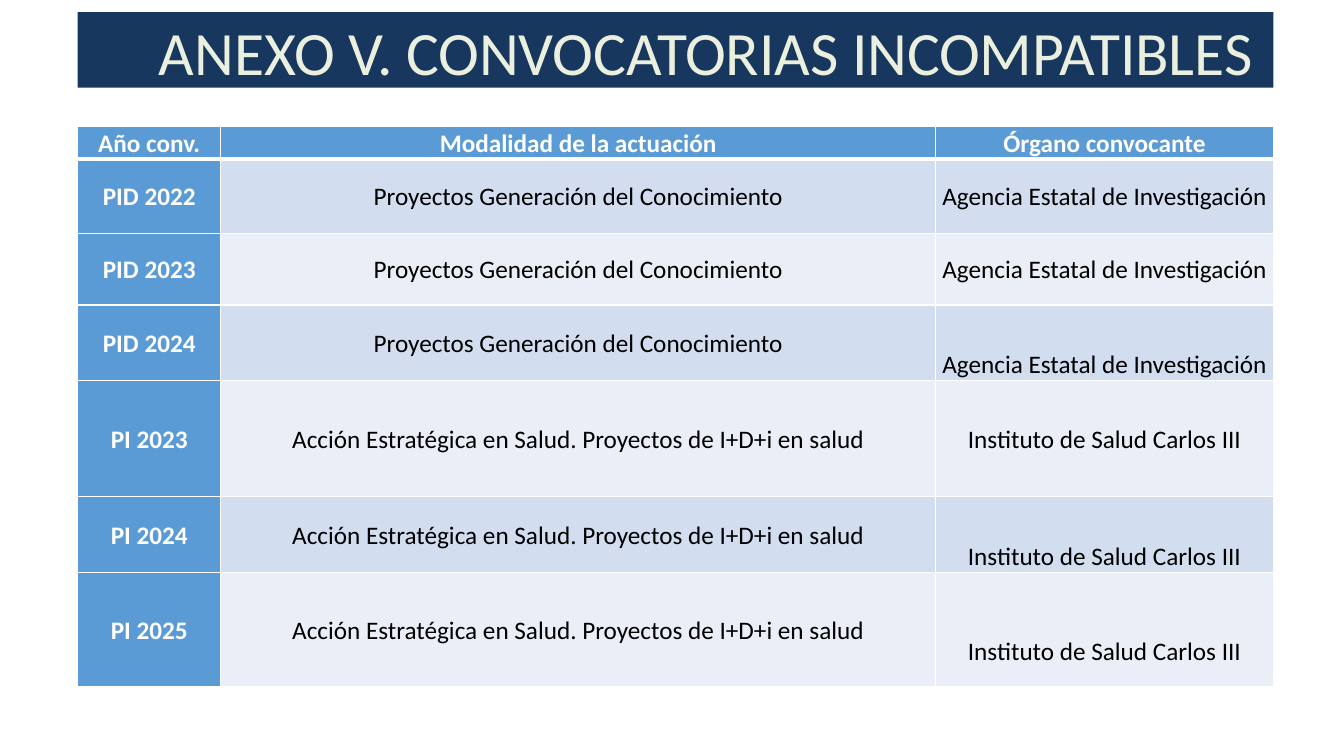
from lxml import etree
from pptx import Presentation
from pptx.dml.color import RGBColor
from pptx.enum import text
from pptx.oxml import ns
from pptx.util import Inches, Pt

NAVY = RGBColor(0x17, 0x37, 0x5E)
CREAM = RGBColor(0xEB, 0xF0, 0xDE)
BLUE = RGBColor(0x5B, 0x9B, 0xD5)
PALE_BLUE = RGBColor(0xD2, 0xDE, 0xEF)
PALEST_BLUE = RGBColor(0xEA, 0xEF, 0xF7)
WHITE = RGBColor(0xFF, 0xFF, 0xFF)
BLACK = RGBColor(0, 0, 0)

KNOWLEDGE = "Proyectos Generación del Conocimiento"
HEALTH = "Acción Estratégica en Salud. Proyectos de I+D+i en salud"
AGENCY = "Agencia Estatal de Investigación"
INSTITUTE = "Instituto de Salud Carlos III"

COLUMN_WIDTHS = (1.42, 7.09, 3.35)
# Row height, cell texts, extra space above the last cell's text
ROWS = (
    (0.32, ("Año conv.", "Modalidad de la actuación", "Órgano convocante"), 0),
    (0.74, ("PID 2022", KNOWLEDGE, AGENCY), 0),
    (0.71, ("PID 2023", KNOWLEDGE, AGENCY), 0),
    (0.75, ("PID 2024", KNOWLEDGE, AGENCY), 0.42),
    (1.15, ("PI 2023", HEALTH, INSTITUTE), 0),
    (0.75, ("PI 2024", HEALTH, INSTITUTE), 0.42),
    (1.14, ("PI 2025", HEALTH, INSTITUTE), 0.42),
)


def apply(target, values):
    for name, value in values.items():
        setattr(target, name, value)


def add_title(page, left, top, width, height):
    title = page.shapes.title
    apply(title, dict(left=Inches(left), top=Inches(top),
                      width=Inches(width), height=Inches(height)))
    title.fill.solid()
    title.fill.fore_color.rgb = NAVY
    apply(title.text_frame, dict(
        word_wrap=True, auto_size=text.MSO_AUTO_SIZE.NONE,
        vertical_anchor=text.MSO_ANCHOR.MIDDLE, margin_left=Inches(0.6),
        margin_top=Inches(0.01), margin_right=0, margin_bottom=0))
    para = title.text_frame.paragraphs[0]
    para.alignment = text.PP_ALIGN.CENTER
    span = para.add_run()
    span.text = "ANEXO V. CONVOCATORIAS INCOMPATIBLES"
    apply(span.font, dict(name="Calibri", size=Pt(44), bold=False))
    span.font.color.rgb = CREAM
    span._r.get_or_add_rPr().set("spc", "-10")


def set_borders(cell, widths):
    properties = cell._tc.get_or_add_tcPr()
    for position, (side, points) in enumerate(widths.items()):
        line = etree.Element(ns.qn(f"a:ln{side}"), w=str(Pt(points)))
        fill = etree.SubElement(line, ns.qn("a:solidFill"))
        etree.SubElement(fill, ns.qn("a:srgbClr"), val=str(WHITE))
        properties.insert(position, line)


def fill_cell(cell, words, fill, strong, space_above):
    apply(cell, dict(margin_left=0, margin_right=0, margin_bottom=0,
                     margin_top=Inches(space_above),
                     vertical_anchor=text.MSO_ANCHOR.MIDDLE))
    cell.fill.solid()
    cell.fill.fore_color.rgb = fill
    para = cell.text_frame.paragraphs[0]
    apply(para, dict(alignment=text.PP_ALIGN.CENTER, line_spacing=1.07,
                     space_after=Pt(7.5)))
    span = para.add_run()
    span.text = words
    apply(span.font, dict(name="Calibri", size=Pt(18), bold=strong))
    span.font.color.rgb = WHITE if strong else BLACK


def add_calls_table(page, left, top, width):
    height = sum(row[0] for row in ROWS)
    table = page.shapes.add_table(
        len(ROWS), len(COLUMN_WIDTHS), Inches(left), Inches(top),
        Inches(width), Inches(height)).table
    for column, column_width in zip(table.columns, COLUMN_WIDTHS):
        column.width = Inches(column_width)
    for r, (row_height, words, space_above) in enumerate(ROWS):
        table.rows[r].height = Inches(row_height)
        for c, label in enumerate(words):
            # Header row and first column are strong; the rest is banded
            strong = r == 0 or c == 0
            band = PALE_BLUE if r % 2 else PALEST_BLUE
            cell = table.cell(r, c)
            fill_cell(cell, label, BLUE if strong else band, strong,
                      space_above if c == 2 else 0)
            set_borders(cell, dict(L=1, R=1, T=3 if r == 1 else 1,
                                   B=3 if r == 0 else 1))


def main():
    deck = Presentation()
    apply(deck, dict(slide_width=Inches(13.33), slide_height=Inches(7.5)))
    page = deck.slides.add_slide(deck.slide_layouts.get_by_name("Title Only"))
    left, width = 0.77, 11.86
    add_title(page, left, 0.12, width, 0.75)
    add_calls_table(page, left, 1.25, width)
    deck.save("out.pptx")


if __name__ == "__main__":
    main()
